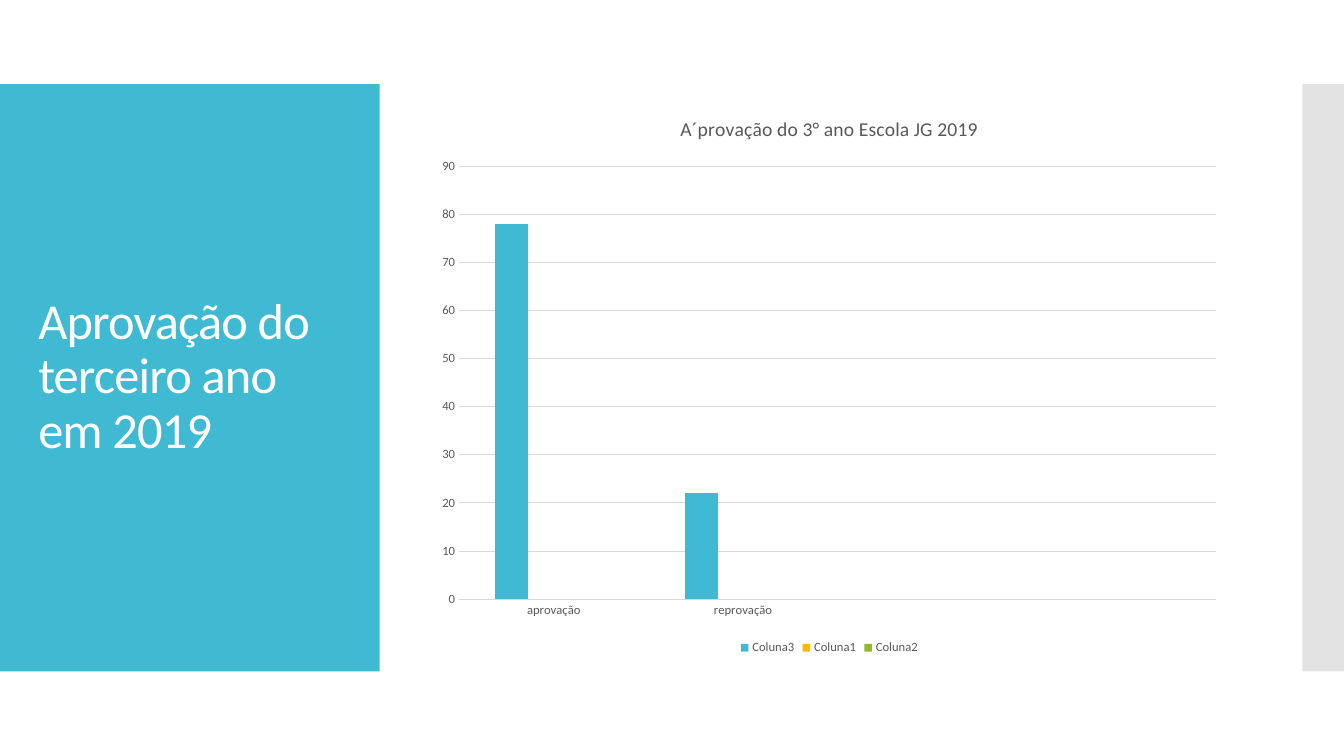
"""Builds a slide with the 2019 approval chart of the third year."""
from lxml import etree
from pptx import Presentation
from pptx.chart.data import CategoryChartData
from pptx.dml.color import RGBColor
from pptx.enum.chart import XL_CHART_TYPE, XL_LEGEND_POSITION, XL_TICK_MARK
from pptx.enum.shapes import MSO_SHAPE
from pptx.enum.text import MSO_ANCHOR, MSO_AUTO_SIZE, PP_ALIGN
from pptx.oxml.ns import qn
from pptx.util import Cm, Pt

RECT = MSO_SHAPE.RECTANGLE
COLUMN = XL_CHART_TYPE.COLUMN_CLUSTERED
BOTTOM = XL_LEGEND_POSITION.BOTTOM
NO_TICK = XL_TICK_MARK.NONE
MIDDLE = MSO_ANCHOR.MIDDLE
NO_FIT = MSO_AUTO_SIZE.NONE
LEFT = PP_ALIGN.LEFT

TEAL = RGBColor(0x40, 0xBA, 0xD2)
GOLD = RGBColor(0xFA, 0xB9, 0x00)
GREEN = RGBColor(0x90, 0xBB, 0x23)
SILVER = RGBColor(0xC8, 0xC8, 0xC8)
PALE = RGBColor(0xD9, 0xD9, 0xD9)
GRAY = RGBColor(0x59, 0x59, 0x59)
WHITE = RGBColor(0xFF, 0xFF, 0xFF)
FACE = "Calibri"


def style(font, size, color):
    font.name = FACE
    font.size = Pt(size)
    font.bold = False
    font.color.rgb = color


def panel(left, width, color):
    shape = slide.shapes.add_shape(RECT, Cm(left), Cm(2.12), Cm(width), Cm(14.8))
    shape.shadow.inherit = False
    shape.fill.solid()
    shape.fill.fore_color.rgb = color
    shape.line.fill.background()
    return shape


deck = Presentation()
deck.slide_width = Cm(33.87)
deck.slide_height = Cm(19.05)
slide = deck.slides.add_slide(deck.slide_layouts[5])

panel(0, 9.57, TEAL)
strip = panel(32.82, 1.05, SILVER)
tint = strip.element.spPr.find(qn("a:solidFill"))[0]
etree.SubElement(tint, qn("a:alpha")).set("val", "50000")

title = slide.shapes.title
title.left, title.top = Cm(0.71), Cm(3.12)
title.width, title.height = Cm(8.18), Cm(12.78)
frame = title.text_frame
frame.text = "Aprovação do terceiro ano em 2019"
frame.word_wrap = True
frame.auto_size = NO_FIT
frame.vertical_anchor = MIDDLE
para = frame.paragraphs[0]
para.alignment = LEFT
para.line_spacing = 0.9
run = para.runs[0]
style(run.font, 36, WHITE)
run.font.element.set("spc", "-60") if hasattr(run.font, "element") else run.font._element.set("spc", "-60")
title.element.getparent().append(title.element)

data = CategoryChartData()
data.categories = ["aprovação", "reprovação", "", ""]
data.add_series("Coluna3", [78, 22, None, None])
data.add_series("Coluna1", [None] * 4)
data.add_series("Coluna2", [None] * 4)
chart = slide.shapes.add_chart(
    COLUMN, Cm(10.74), Cm(2.39), Cm(20.32), Cm(14.22), data).chart
chart.font.name = FACE
chart.font.size = Pt(10)

chart.has_title = True
head = chart.chart_title.text_frame
head.text = "A´provação do 3° ano Escola JG 2019"
style(head.paragraphs[0].runs[0].font, 14, GRAY)
chart.chart_title.include_in_layout = False

chart.has_legend = True
chart.legend.position = BOTTOM
chart.legend.include_in_layout = False
style(chart.legend.font, 9, GRAY)

plot = chart.plots[0]
plot.gap_width = 219
plot.overlap = -27
plot.vary_by_categories = False
for series, color in zip(plot.series, (TEAL, GOLD, GREEN)):
    series.format.fill.solid()
    series.format.fill.fore_color.rgb = color

base, scale = chart.category_axis, chart.value_axis
for axis in (base, scale):
    axis.major_tick_mark = NO_TICK
    axis.minor_tick_mark = NO_TICK
    style(axis.tick_labels.font, 9, GRAY)
scale.minimum_scale = 0
scale.maximum_scale = 90
scale.major_unit = 10
scale.format.line.fill.background()
scale.has_major_gridlines = True
for line in (base.format.line, scale.major_gridlines.format.line):
    line.color.rgb = PALE
    line.width = Pt(0.75)

deck.save("out.pptx")
